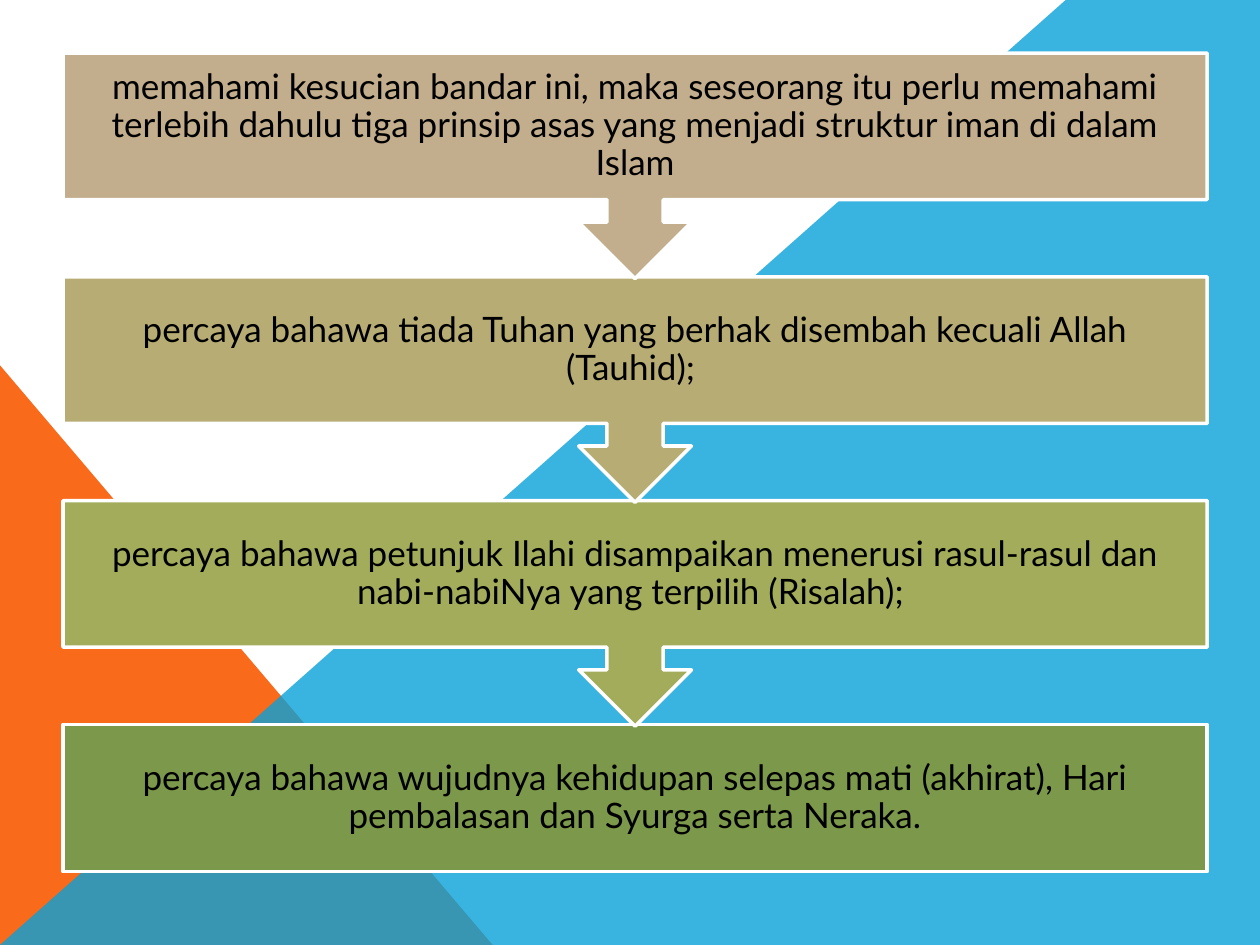
import pptx
import pptx.util
import pptx.dml.color
import pptx.enum.shapes
import pptx.enum.text
import pptx.oxml
import pptx.oxml.ns

Pt = pptx.util.Pt
RGB = pptx.dml.color.RGBColor
MSO = pptx.enum.shapes.MSO_SHAPE

WHITE = RGB(0xFF, 0xFF, 0xFF)
BLACK = RGB(0, 0, 0)
ORANGE = RGB(0xF9, 0x6A, 0x1B)
BLUE = RGB(0x08, 0xA1, 0xD9)
TAN = RGB(0xC2, 0xAD, 0x8D)
KHAKI = RGB(0xB7, 0xAD, 0x74)
OLIVE = RGB(0xA3, 0xAC, 0x5A)
GREEN = RGB(0x7C, 0x98, 0x4A)

WIDTH, HEIGHT = 720, 540
LEFT, TOP, STEP = 36, 30.3, 127.9
BOX_WIDTH, BOX_HEIGHT, CALLOUT_HEIGHT = 653.8, 84.2, 128.9

STEPS = [
    (TAN, "memahami kesucian bandar ini, maka seseorang itu perlu memahami "
          "terlebih dahulu tiga prinsip asas yang menjadi struktur iman di dalam Islam"),
    (KHAKI, "percaya bahawa tiada Tuhan yang berhak disembah kecuali Allah (Tauhid); "),
    (OLIVE, "percaya bahawa petunjuk Ilahi disampaikan menerusi rasul-rasul dan "
            "nabi-nabiNya yang terpilih (Risalah); "),
    (GREEN, "percaya bahawa wujudnya kehidupan selepas mati (akhirat), Hari "
            "pembalasan dan Syurga serta Neraka."),
]


class Deck:
    font = "Lato"
    size = 20
    inset = 11.5

    def __init__(self, s):
        self.s = s

    def paint(self, sp, color):
        sp.shadow.inherit = False
        sp.fill.solid()
        sp.fill.fore_color.rgb = color
        sp.line.fill.background()
        return sp

    def shape(self, kind, x, y, w, h, color):
        sp = self.s.shapes.add_shape(kind, Pt(x), Pt(y), Pt(w), Pt(h))
        return self.paint(sp, color)

    def polygon(self, points, color, opacity):
        corners = [(Pt(x), Pt(y)) for x, y in points]
        builder = self.s.shapes.build_freeform(*corners[0])
        builder.add_line_segments(corners[1:], close=True)
        sp = self.paint(builder.convert_to_shape(), color)
        clr = sp.fill._xPr.find(".//" + pptx.oxml.ns.qn("a:srgbClr"))
        alpha = pptx.oxml.parse_xml(
            f'<a:alpha {pptx.oxml.ns.nsdecls("a")} val="{opacity * 1000}"/>')
        clr.append(alpha)

    def step(self, kind, y, h, color, text):
        sp = self.shape(kind, LEFT, y, BOX_WIDTH, h, color)
        sp.line.color.rgb = WHITE
        sp.line.width = Pt(2)
        tf = sp.text_frame
        tf.word_wrap = True
        tf.vertical_anchor = pptx.enum.text.MSO_ANCHOR.MIDDLE
        tf.margin_left = tf.margin_right = Pt(self.inset)
        tf.margin_top = tf.margin_bottom = Pt(self.inset)
        p = tf.paragraphs[0]
        p.text = text
        p.alignment = pptx.enum.text.PP_ALIGN.CENTER
        p.line_spacing = 0.9
        p.font.name = self.font
        p.font.size = Pt(self.size)
        p.font.color.rgb = BLACK


def main():
    prs = pptx.Presentation()
    prs.slide_width, prs.slide_height = Pt(WIDTH), Pt(HEIGHT)
    deck = Deck(prs.slides.add_slide(prs.slide_layouts[6]))
    deck.shape(MSO.RIGHT_TRIANGLE, 0, 208.8, 281.5, 331.2, ORANGE)
    deck.polygon([(0, HEIGHT), (609, 0), (WIDTH, 0), (WIDTH, HEIGHT)], BLUE, 80)

    last = len(STEPS) - 1
    for i, (color, text) in reversed(list(enumerate(STEPS))):
        kind, h = ((MSO.RECTANGLE, BOX_HEIGHT) if i == last
                   else (MSO.DOWN_ARROW_CALLOUT, CALLOUT_HEIGHT))
        deck.step(kind, TOP + i * STEP, h, color, text)
    prs.save("out.pptx")


if __name__ == "__main__":
    main()
